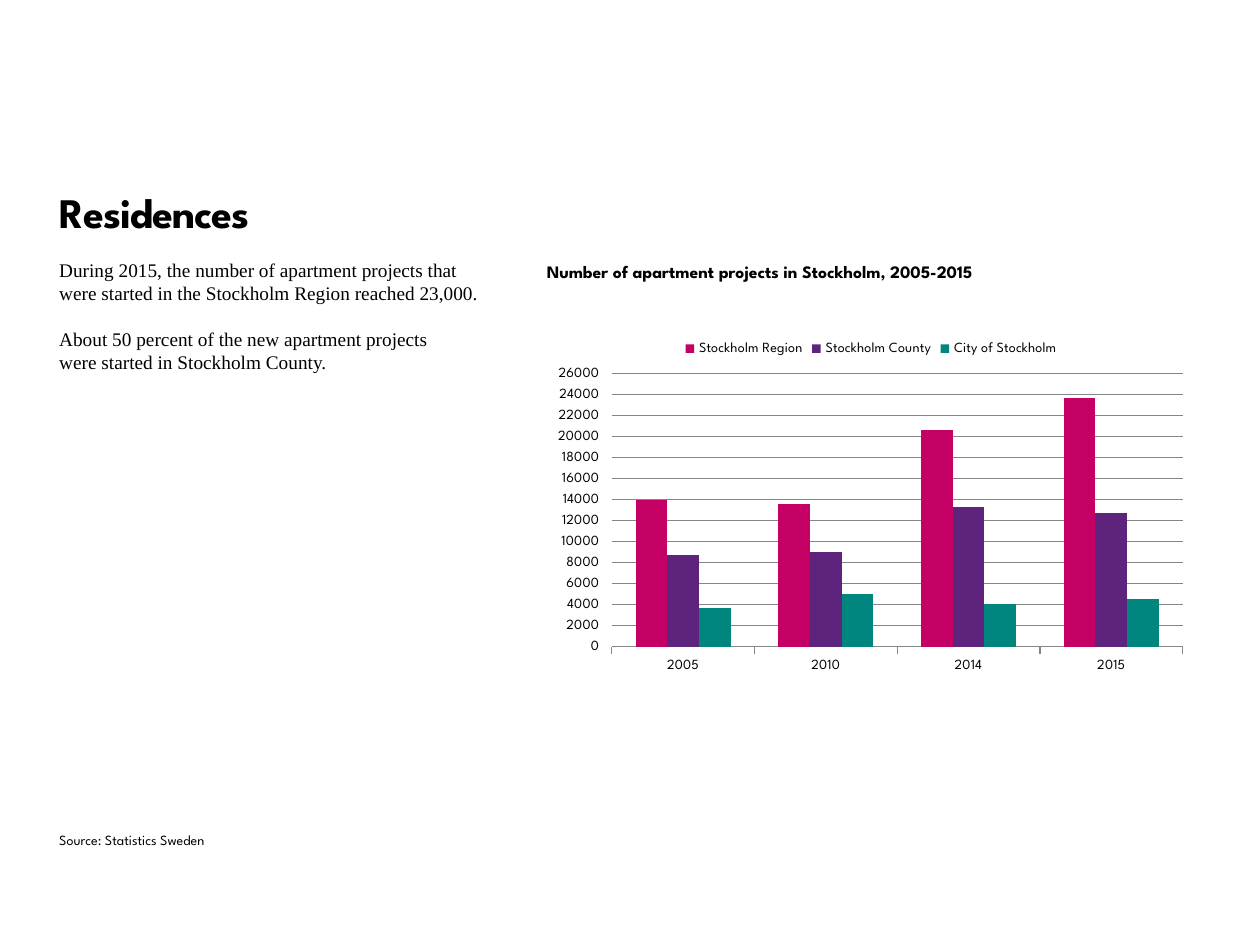
"""Build the Residences slide: text on the left, apartment project chart on the right."""
from lxml import etree
from pptx import Presentation, util as u
from pptx.chart.data import CategoryChartData
from pptx.dml.color import RGBColor
from pptx.enum import chart as charts
from pptx.oxml import ns

HEADING_FONT, BODY_FONT = "League Spartan", "Times New Roman"
BLACK, GREY = "000000", "868686"
LEFT, RIGHT = 0.047, 0.434

presentation = Presentation()
presentation.slide_width, presentation.slide_height = u.Inches(10), u.Inches(7.5)
slide = presentation.slides.add_slide(presentation.slide_layouts[6])


def color(hex_string):
    return RGBColor.from_string(hex_string)


def area(left, top, width, height):
    return (int(presentation.slide_width * left), int(presentation.slide_height * top),
            int(presentation.slide_width * width), int(presentation.slide_height * height))


body = (
    "During 2015, the number of apartment projects that\v"
    "were started in the Stockholm Region reached 23,000.\n"
    "About 50 percent of the new apartment projects\v"
    "were started in Stockholm County."
)
texts = [
    (body, area(LEFT, 0.273, 0.36, 0.107), BODY_FONT, 11, False, 13.15),
    ("Residences", area(LEFT, 0.199, 0.609, 0.06), HEADING_FONT, 24, True, 28),
    ("Number of apartment projects in Stockholm, 2005-2015",
     area(RIGHT, 0.276, 0.423, 0.067), HEADING_FONT, 10, True, None),
    ("Source: Statistics Sweden", area(LEFT, 0.88, 0.423, 0.033), HEADING_FONT, 8, False, None),
]
for wording, box, font_name, size, bold, line_points in texts:
    frame = slide.shapes.add_textbox(*box).text_frame
    frame.word_wrap = True
    frame.margin_left = frame.margin_right = frame.margin_top = frame.margin_bottom = 0
    frame.text = wording
    for paragraph in frame.paragraphs:
        paragraph.font.name, paragraph.font.size = font_name, u.Pt(size)
        paragraph.font.bold = bold
        paragraph.font.color.rgb = color(BLACK)
        if line_points:
            paragraph.line_spacing = u.Pt(line_points)
        if wording == body:
            paragraph.space_after = u.Pt(line_points)
        if wording == "Residences":
            paragraph.runs[0].font._element.set("spc", "-50")

series_rows = [
    ("Stockholm Region", (14000, 13600, 20600, 23700), "C40064"),
    ("Stockholm County", (8700, 9000, 13300, 12700), "5D237D"),
    ("City of Stockholm", (3700, 5000, 4100, 4500), "00867F"),
]
data = CategoryChartData()
data.categories = ["2005", "2010", "2014", "2015"]
for name, values, fill in series_rows:
    data.add_series(name, values)

chart = slide.shapes.add_chart(
    charts.XL_CHART_TYPE.COLUMN_CLUSTERED, *area(RIGHT, 0.347, 0.515, 0.371), data).chart
chart.has_title = False
chart.has_legend = True
chart.legend.position = charts.XL_LEGEND_POSITION.TOP
chart.legend.include_in_layout = False

category_axis, value_axis = chart.category_axis, chart.value_axis
for font in (chart.font, chart.legend.font,
             category_axis.tick_labels.font, value_axis.tick_labels.font):
    font.name, font.size = HEADING_FONT, u.Pt(8)
    font.color.rgb = color(BLACK)

value_axis.minimum_scale, value_axis.maximum_scale, value_axis.major_unit = 0, 26000, 2000
value_axis.format.line.fill.background()
for line in (category_axis.format.line, value_axis.major_gridlines.format.line):
    line.color.rgb, line.width = color(GREY), u.Pt(0.75)
category_axis.major_tick_mark = charts.XL_TICK_MARK.OUTSIDE

plot = chart.plots[0]
plot.gap_width, plot.overlap, plot.vary_by_categories = 150, 0, False
for series, (name, values, fill) in zip(plot.series, series_rows):
    series.format.fill.solid()
    series.format.fill.fore_color.rgb = color(fill)

plot_area = chart._chartSpace.find(".//" + ns.qn("c:plotArea"))
for old_layout in plot_area.findall(ns.qn("c:layout")):
    plot_area.remove(old_layout)
layout = etree.Element(ns.qn("c:layout"))
manual = etree.SubElement(layout, ns.qn("c:manualLayout"))
for tag, value in [("layoutTarget", "inner"), ("xMode", "edge"), ("yMode", "edge"),
                   ("x", "0.10"), ("y", "0.13"), ("w", "0.88"), ("h", "0.78")]:
    etree.SubElement(manual, ns.qn("c:" + tag)).set("val", value)
plot_area.insert(0, layout)

presentation.save("out.pptx")
